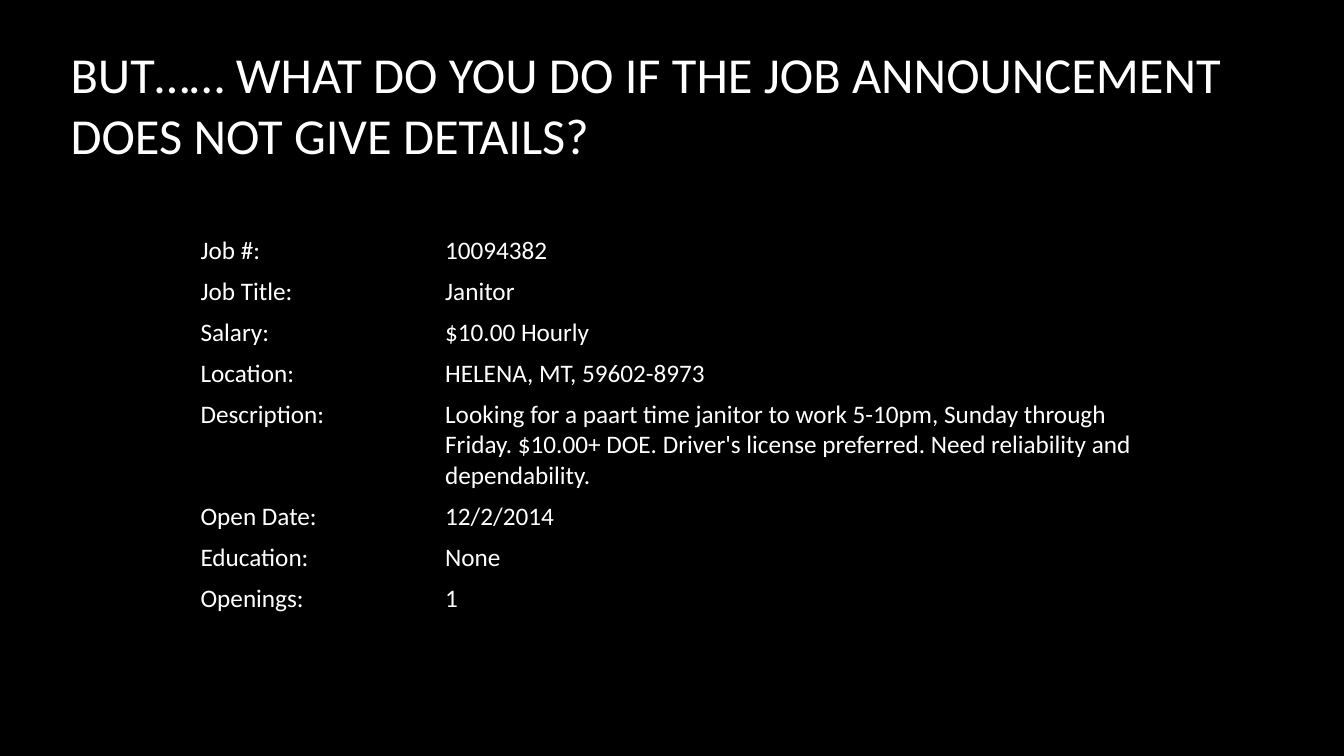
from pptx import Presentation
from pptx.dml.color import RGBColor
from pptx.enum.text import MSO_ANCHOR, MSO_AUTO_SIZE, PP_ALIGN
from pptx.util import Inches, Pt

PLAIN_TABLE_STYLE = "{2D5ABB26-0587-4C30-8999-92F81FD0307C}"

TITLE = "BUT…… WHAT DO YOU DO IF THE JOB ANNOUNCEMENT DOES NOT GIVE DETAILS?"
JOB_DETAILS = [
    ("Job #:", "10094382"),
    ("Job Title:", "Janitor"),
    ("Salary:", "$10.00 Hourly"),
    ("Location:", "HELENA, MT, 59602-8973"),
    ("Description:", "Looking for a paart time janitor to work 5-10pm, Sunday through "
                     "Friday. $10.00+ DOE. Driver's license preferred. Need reliability "
                     "and dependability."),
    ("Open Date:", "12/2/2014"),
    ("Education:", "None"),
    ("Openings:", "1"),
]


def color(value):
    return RGBColor.from_string(value)


class JobSlide:
    font_name = "Calibri"
    text_color = "FFFFFF"
    background_color = "000000"
    title_size = 36
    table_size = 18

    def __init__(self, presentation):
        self.presentation = presentation
        self.slide = presentation.slides.add_slide(presentation.slide_layouts[5])
        fill = self.slide.background.fill
        fill.solid()
        fill.fore_color.rgb = color(self.background_color)

    def across(self, percent):
        return round(self.presentation.slide_width * percent / 100)

    def down(self, percent):
        return round(self.presentation.slide_height * percent / 100)

    def set_text(self, text_frame, text, size):
        text_frame.text = text
        paragraph = text_frame.paragraphs[0]
        paragraph.alignment = PP_ALIGN.LEFT
        paragraph.font.name = self.font_name
        paragraph.font.size = Pt(size)
        paragraph.font.color.rgb = color(self.text_color)

    def title(self, text, left, top, width, height):
        shape = self.slide.shapes.title
        shape.left, shape.top = self.across(left), self.down(top)
        shape.width, shape.height = self.across(width), self.down(height)
        shape.text_frame.auto_size = MSO_AUTO_SIZE.NONE
        shape.text_frame.vertical_anchor = MSO_ANCHOR.MIDDLE
        self.set_text(shape.text_frame, text, self.title_size)

    def cell(self, cell, text, anchor):
        cell.fill.background()
        cell.margin_left, cell.margin_right = Inches(0.03), Inches(0.1)
        cell.margin_top = cell.margin_bottom = Inches(0.05)
        cell.vertical_anchor = anchor
        self.set_text(cell.text_frame, text, self.table_size)

    def table(self, entries, left, top, columns, rows):
        frame = self.slide.shapes.add_table(
            len(rows), len(columns), self.across(left), self.down(top),
            self.across(sum(columns)), self.down(sum(rows)))
        table = frame.table
        table.first_row = table.horz_banding = False
        table._tbl.tblPr[0].text = PLAIN_TABLE_STYLE
        for column, width in zip(table.columns, columns):
            column.width = self.across(width)
        for index, (entry, height) in enumerate(zip(entries, rows)):
            table.rows[index].height = self.down(height)
            anchor = MSO_ANCHOR.TOP if index else MSO_ANCHOR.BOTTOM
            for position, text in enumerate((*entry, "")):
                self.cell(table.cell(index, position), text, anchor)
            if index:
                table.cell(index, 1).merge(table.cell(index, 2))


def main():
    presentation = Presentation()
    presentation.slide_width = Inches(13.33)
    presentation.slide_height = Inches(7.5)
    job_slide = JobSlide(presentation)
    job_slide.title(TITLE, 4.5, 0, 89.8, 27.5)
    rows = [13.4 if label == "Description:" else 5.4 for label, value in JOB_DETAILS]
    job_slide.table(JOB_DETAILS, 14.7, 30.5, [18.2, 53.2, 1.4], rows)
    presentation.save("out.pptx")


if __name__ == "__main__":
    main()
